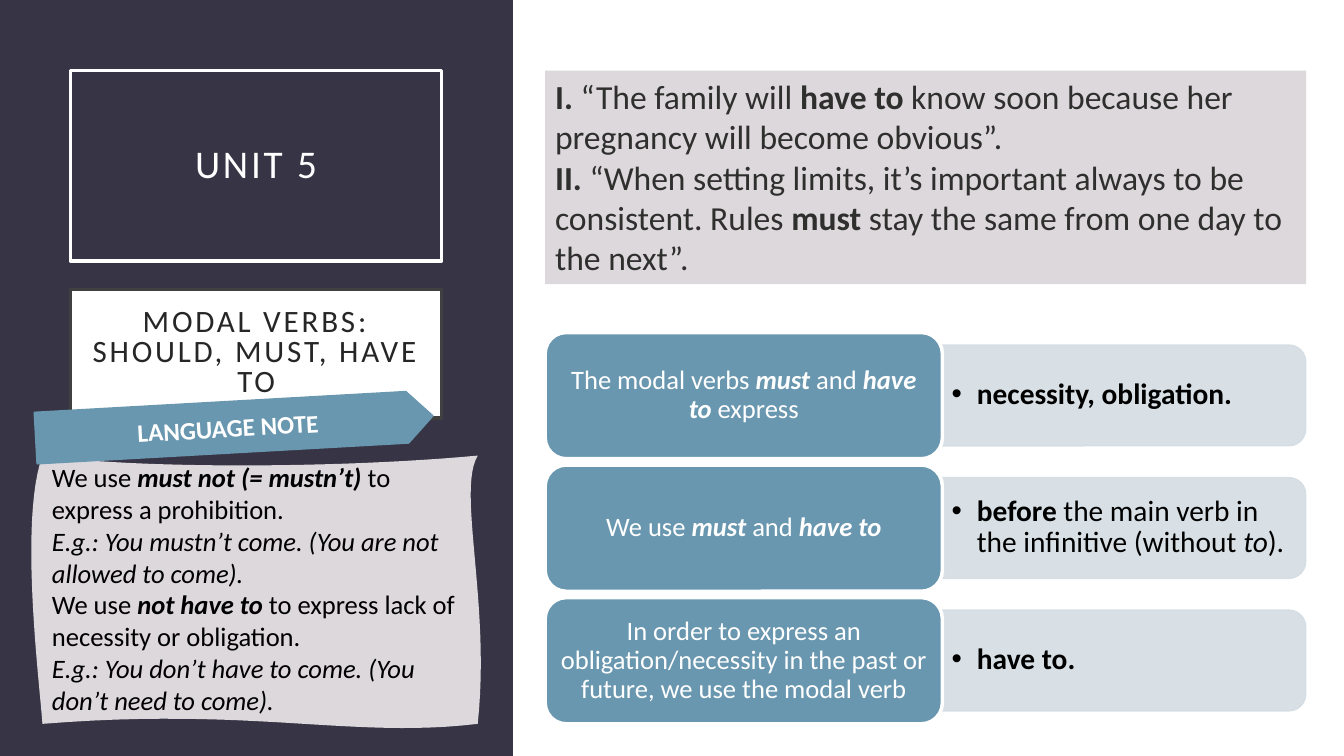
from lxml.etree import SubElement
from pptx import Presentation
from pptx.dml.color import RGBColor
from pptx.enum.shapes import MSO_SHAPE
from pptx.enum.text import MSO_ANCHOR, PP_ALIGN
from pptx.oxml.ns import qn
from pptx.util import Cm, Pt


def style(sp, fill=None, line=None, width=2.5):
    sp.shadow.inherit = False
    if fill:
        sp.fill.solid()
        sp.fill.fore_color.rgb = RGBColor.from_string(fill)
    else:
        sp.fill.background()
    if line:
        sp.line.color.rgb = RGBColor.from_string(line)
        sp.line.width = Pt(width)
    else:
        sp.line.fill.background()
    return sp


def write(sp, paragraphs, size, color, align=PP_ALIGN.LEFT, anchor=MSO_ANCHOR.MIDDLE,
          insets=(0.25, 0.13, 0.25, 0.13), spacing=1.0, tracking=0):
    tf = sp.text_frame
    tf.word_wrap = True
    tf.vertical_anchor = anchor
    tf.margin_left, tf.margin_top, tf.margin_right, tf.margin_bottom = map(Cm, insets)
    for i, runs in enumerate(paragraphs):
        p = tf.add_paragraph() if i else tf.paragraphs[0]
        p.alignment = align
        p.line_spacing = spacing
        for text, marks in runs:
            r = p.add_run()
            r.text = text
            r.font.name = "Calibri"
            r.font.size = Pt(size)
            r.font.bold = "b" in marks
            r.font.italic = "i" in marks
            r.font.color.rgb = RGBColor.from_string(color)
            if tracking:
                r.font._element.set("spc", str(tracking * 100))
    return tf


NAVY, BLUE, GREY, PALE, WHITE = "373545", "6997AF", "DCD8DC", "D4DDE3", "FFFFFF"

prs = Presentation()
prs.slide_width, prs.slide_height = Cm(33.87), Cm(19.05)
s = prs.slides.add_slide(prs.slide_layouts[6])
shapes = s.shapes

style(shapes.add_shape(MSO_SHAPE.RECTANGLE, 0, 0, Cm(12.93), prs.slide_height), NAVY)

headings = [
    ("UNIT 5", 1.78, 4.8, None, WHITE, 28, WHITE, 0.9),
    ("MODAL VERBS: SHOULD, MUST, HAVE TO", 7.29, 3.25, WHITE, "404040", 22.2, "262626", 0.8),
]
for text, top, height, fill, line, size, color, spacing in headings:
    sp = shapes.add_shape(MSO_SHAPE.RECTANGLE, Cm(1.78), Cm(top), Cm(9.35), Cm(height))
    style(sp, fill, line)
    write(sp, [[(text, "")]], size, color, PP_ALIGN.CENTER,
          insets=(0.51,) * 4, spacing=spacing, tracking=2)

quotes = [
    [("I. ", "b"), ("“The family will ", ""), ("have to ", "b"),
     ("know soon because her pregnancy will become obvious”.", "")],
    [("II. ", "b"),
     ("“When setting limits, it’s important always to be consistent. Rules ", ""),
     ("must", "b"), (" stay the same from one day to the next”.", "")],
]
sp = shapes.add_shape(MSO_SHAPE.RECTANGLE, Cm(13.74), Cm(1.78), Cm(19.18), Cm(5.38))
write(style(sp, GREY), quotes, 24, "2F2F2E", anchor=MSO_ANCHOR.TOP)

rules = [
    ([("The modal verbs ", ""), ("must", "bi"), (" and ", ""), ("have to ", "bi"),
      ("express", "")],
     [("necessity, obligation.", "b")]),
    ([("We use ", ""), ("must", "bi"), (" and ", ""), ("have to", "bi")],
     [("before", "b"), (" the main verb in the infinitive (without ", ""),
      ("to", "i"), (").", "")]),
    ([("In order to express an obligation/necessity in the past or future, "
       "we use the modal verb", "")],
     [("have to.", "b")]),
]
for row, (rule, answer) in enumerate(rules):
    top = 8.38 + 3.34 * row

    bar = shapes.add_shape(MSO_SHAPE.ROUND_2_SAME_RECTANGLE,
                           Cm(27.05), Cm(top - 3), Cm(2.54), Cm(9.17))
    bar.rotation = 90
    style(bar, PALE, PALE, 1)
    for color in bar._element.spPr.iter(qn("a:srgbClr")):
        SubElement(color, qn("a:alpha"), val="90000")

    box = shapes.add_textbox(Cm(23.75), Cm(top + 0.43), Cm(9.04), Cm(2.29))
    tf = write(box, [answer], 21, "000000", insets=(0.23, 0.1, 0.23, 0.1), spacing=0.9)
    pPr = tf.paragraphs[0]._p.get_or_add_pPr()
    pPr.set("marL", str(Cm(0.64)))
    pPr.set("indent", str(-Cm(0.64)))
    SubElement(pPr, qn("a:buFont"), typeface="Arial")
    SubElement(pPr, qn("a:buChar"), char="•")

    pill = shapes.add_shape(MSO_SHAPE.ROUNDED_RECTANGLE,
                            Cm(13.74), Cm(top), Cm(10.01), Cm(3.18))
    write(style(pill, BLUE, WHITE), [rule], 19, WHITE, PP_ALIGN.CENTER,
          insets=(0.2, 0.1, 0.2, 0.1), spacing=0.9)

start = (1070, 11480)
curves = [
    ((3400, 11810), (8480, 11810), (12040, 11480)),
    ((11510, 12370), (12370, 15190), (12040, 18240)),
    ((8860, 18620), (6380, 17810), (1070, 18240)),
    ((990, 17120), (480, 13110), start),
]
steps = 24
points = []
corner = start
for c1, c2, end in curves:
    for n in range(1, steps + 1):
        t = n / steps
        u = 1 - t
        points.append([u**3 * a + 3 * u * u * t * b + 3 * u * t * t * c + t**3 * d
                       for a, b, c, d in zip(corner, c1, c2, end)])
    corner = end
outline = shapes.build_freeform(*start, scale=Cm(1) / 1000)
outline.add_line_segments(points)
note = style(outline.convert_to_shape(), GREY)
notes = [
    [("We use ", ""), ("must not (= mustn’t) ", "bi"), ("to express a prohibition.", "")],
    [("E.g.: You mustn’t come. (You are not allowed to come).", "i")],
    [("We use ", ""), ("not have to ", "bi"),
     ("to express lack of necessity or obligation.", "")],
    [("E.g.: You don’t have to come. (You don’t need to come).", "i")],
]
write(note, notes, 19, "000000", anchor=MSO_ANCHOR.TOP, insets=(0.52, 0.13, 0.3, 0.13))

arrow = shapes.add_shape(MSO_SHAPE.PENTAGON, Cm(0.89), Cm(10.11), Cm(10.03), Cm(1.3))
arrow.rotation = -3.2
write(style(arrow, BLUE, BLUE, 1), [[("LANGUAGE NOTE", "b")]], 18, WHITE, PP_ALIGN.CENTER)

prs.save("out.pptx")
